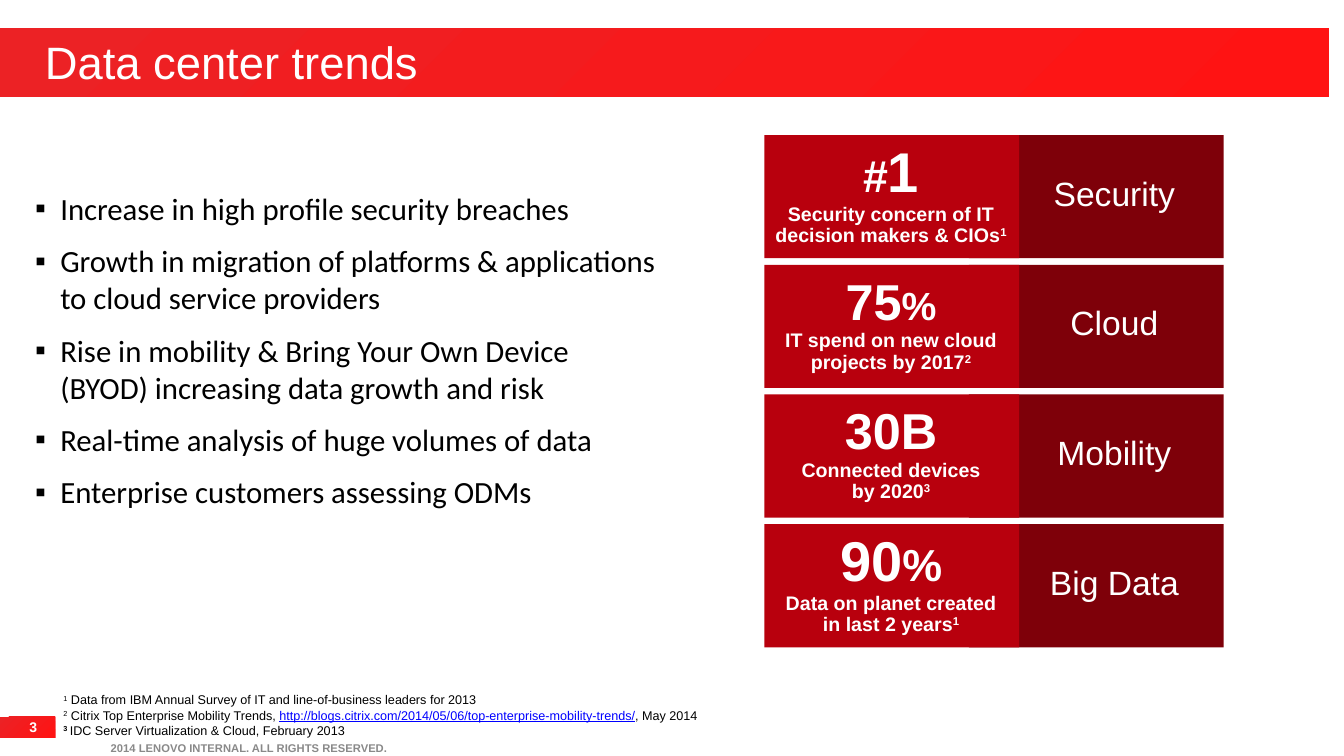
from dataclasses import dataclass

from lxml.etree import SubElement
from pptx import Presentation
from pptx.dml.color import RGBColor
from pptx.enum.shapes import MSO_SHAPE
from pptx.enum.text import MSO_ANCHOR, PP_ALIGN
from pptx.oxml.ns import qn
from pptx.shapes.autoshape import Shape
from pptx.slide import Slide
from pptx.text.text import TextFrame
from pptx.util import Pt

WHITE, BLACK, GREY, LINK_BLUE = "FFFFFF", "000000", "898989", "0000FF"
BAR_START, BAR_END = "EC2225", "FF1313"
STAT_RED, TOPIC_RED = "B8000D", "7E0009"


@dataclass(frozen=True)
class Span:
    text: str
    size: float
    color: str = WHITE
    bold: bool = False
    raised: bool = False
    underline: bool = False
    font: str = "Arial"


@dataclass(frozen=True)
class Box:
    left: float
    top: float
    width: float
    height: float


@dataclass(frozen=True)
class Trend:
    topic: str
    figure: list[Span]
    claim: list[str]
    source: str
    claim_width: float


TRENDS = [
    Trend("Security", [Span("#", 32, bold=True), Span("1", 40, bold=True)],
          ["Security concern of IT", "decision makers & CIOs"], "1", 188),
    Trend("Cloud", [Span("75", 36, bold=True), Span("%", 28, bold=True)],
          ["IT spend on new cloud projects by 2017"], "2", 169),
    Trend("Mobility", [Span("30B", 36, bold=True)],
          ["Connected devices", "by 2020"], "3", 140),
    Trend("Big Data", [Span("90", 40, bold=True), Span("%", 32, bold=True)],
          ["Data on planet created in last 2 years"], "1", 154),
]

BULLETS = [
    "Increase in high profile security breaches",
    "Growth in migration of platforms & applications to cloud service providers",
    "Rise in mobility & Bring Your Own Device (BYOD) increasing data growth and risk",
    "Real-time analysis of huge volumes of data",
    "Enterprise customers assessing ODMs",
]

FOOTNOTES = [
    [Span("1", 9, BLACK, raised=True),
     Span(" Data from IBM Annual Survey of IT and line-of-business leaders for 2013", 9, BLACK)],
    [Span("2", 9, BLACK, raised=True),
     Span(" Citrix Top Enterprise Mobility Trends, ", 9, BLACK),
     Span("http://blogs.citrix.com/2014/05/06/top-enterprise-mobility-trends/", 9,
          LINK_BLUE, underline=True),
     Span(", May 2014", 9, BLACK)],
    [Span("3", 9, BLACK, bold=True, raised=True),
     Span(" ", 6, BLACK),
     Span("IDC Server Virtualization & Cloud, February 2013", 9, BLACK)],
]

ROW_TOP, ROW_PITCH, ROW_HEIGHT = 96.5, 92.65, 88
PANEL_WIDTH, STAT_LEFT, TOPIC_LEFT = 182, 546, 692
STAT_CENTER, TOPIC_CENTER, TOPIC_WIDTH = 636.5, 796, 113


def rgb(color: str) -> RGBColor:
    return RGBColor.from_string(color)


def add_block(slide: Slide, box: Box) -> Shape:
    block = slide.shapes.add_shape(MSO_SHAPE.RECTANGLE, Pt(box.left), Pt(box.top),
                                   Pt(box.width), Pt(box.height))
    block.shadow.inherit = False
    block.line.fill.background()
    return block


def add_panel(slide: Slide, box: Box, color: str) -> None:
    fill = add_block(slide, box).fill
    fill.solid()
    fill.fore_color.rgb = rgb(color)


def add_gradient_bar(slide: Slide, box: Box) -> None:
    fill = add_block(slide, box).fill
    fill.gradient()
    fill.gradient_angle = 315
    for stop, color in zip(fill.gradient_stops, (BAR_START, BAR_END)):
        stop.color.rgb = rgb(color)


def add_text(slide: Slide, box: Box, paragraphs: list[list[Span]],
             align: PP_ALIGN = PP_ALIGN.LEFT, anchor: MSO_ANCHOR = MSO_ANCHOR.MIDDLE,
             insets: tuple[float, float] = (0, 0), spacing: float = 1,
             wrap: bool = True) -> TextFrame:
    """Insets are horizontal, then vertical; a newline in a span is a line break."""
    frame = slide.shapes.add_textbox(Pt(box.left), Pt(box.top),
                                     Pt(box.width), Pt(box.height)).text_frame
    frame.word_wrap = wrap
    frame.vertical_anchor = anchor
    frame.margin_left = frame.margin_right = Pt(insets[0])
    frame.margin_top = frame.margin_bottom = Pt(insets[1])
    for index, spans in enumerate(paragraphs):
        paragraph = frame.add_paragraph() if index else frame.paragraphs[0]
        paragraph.alignment = align
        paragraph.line_spacing = spacing
        for span in spans:
            if span.text == "\n":
                paragraph.add_line_break()
                continue
            run = paragraph.add_run()
            run.text = span.text
            run.font.name = span.font
            run.font.size = Pt(span.size)
            run.font.bold = span.bold
            run.font.underline = span.underline
            run.font.color.rgb = rgb(span.color)
            if span.raised:
                run._r.get_or_add_rPr().set("baseline", "30000")
    return frame


def add_bullets(slide: Slide) -> None:
    frame = add_text(slide, Box(18, 132, 460, 353),
                     [[Span(text, 22, BLACK, font="Calibri")] for text in BULLETS],
                     anchor=MSO_ANCHOR.TOP, insets=(7.2, 3.6))
    for paragraph in frame.paragraphs:
        paragraph.space_after = Pt(11)
        properties = paragraph._p.get_or_add_pPr()
        properties.set("marL", str(Pt(18)))
        properties.set("indent", str(-Pt(18)))
        SubElement(properties, qn("a:buFont")).set("typeface", "Arial")
        SubElement(properties, qn("a:buChar")).set("char", "▪")


def add_trend(slide: Slide, row: int, trend: Trend) -> None:
    top = ROW_TOP + row * ROW_PITCH
    add_panel(slide, Box(TOPIC_LEFT, top, PANEL_WIDTH, ROW_HEIGHT), TOPIC_RED)
    add_panel(slide, Box(STAT_LEFT, top, PANEL_WIDTH, ROW_HEIGHT), STAT_RED)
    claim = [[Span(line, 14, bold=True)] for line in trend.claim]
    claim[-1].append(Span(trend.source, 14, bold=True, raised=True))
    text_top = top - 1
    add_text(slide, Box(STAT_CENTER - trend.claim_width / 2, text_top,
                        trend.claim_width, ROW_HEIGHT),
             [trend.figure, *claim], PP_ALIGN.CENTER, spacing=0.9)
    add_text(slide, Box(TOPIC_CENTER - TOPIC_WIDTH / 2, text_top, TOPIC_WIDTH, ROW_HEIGHT),
             [[Span(trend.topic, 24)]], PP_ALIGN.CENTER, spacing=0.9)


def main() -> None:
    deck = Presentation()
    deck.slide_width, deck.slide_height = Pt(960), Pt(540)
    slide = deck.slides.add_slide(deck.slide_layouts[6])

    add_gradient_bar(slide, Box(0, 20, 949, 49))
    add_gradient_bar(slide, Box(0, 512, 39.5, 15))
    add_text(slide, Box(8, 513.5, 31.5, 12), [[Span("3", 10, bold=True)]],
             PP_ALIGN.CENTER, wrap=False)
    add_text(slide, Box(22.5, 20, 924, 47), [[Span("Data center trends", 32.4)]],
             insets=(9.5, 5))
    add_bullets(slide)
    add_text(slide, Box(38.2, 491, 469, 40), FOOTNOTES, anchor=MSO_ANCHOR.TOP,
             insets=(7.2, 3.6), wrap=False)
    for row, trend in enumerate(TRENDS):
        add_trend(slide, row, trend)
    add_text(slide, Box(26, 529, 304, 10),
             [[Span("2014 LENOVO INTERNAL. ALL RIGHTS RESERVED.", 8, GREY, bold=True)]],
             PP_ALIGN.CENTER)
    deck.save("out.pptx")


if __name__ == "__main__":
    main()
